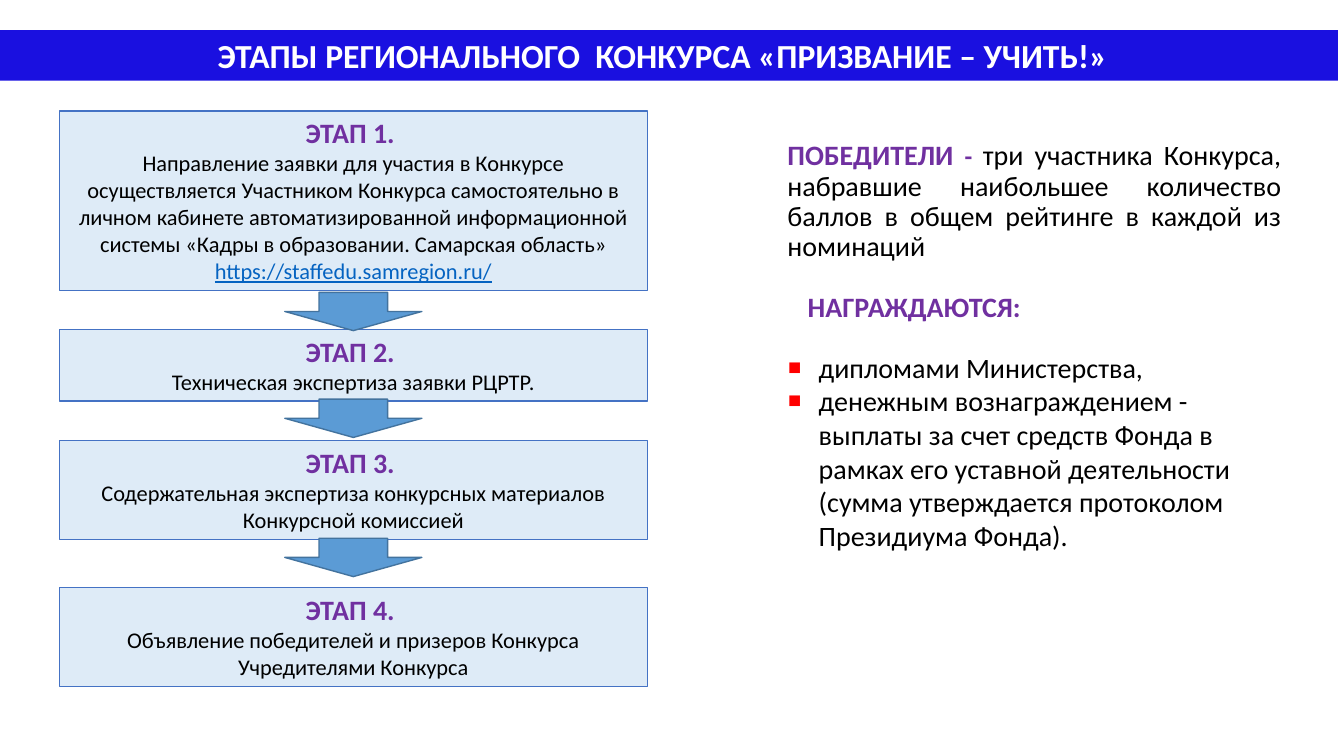
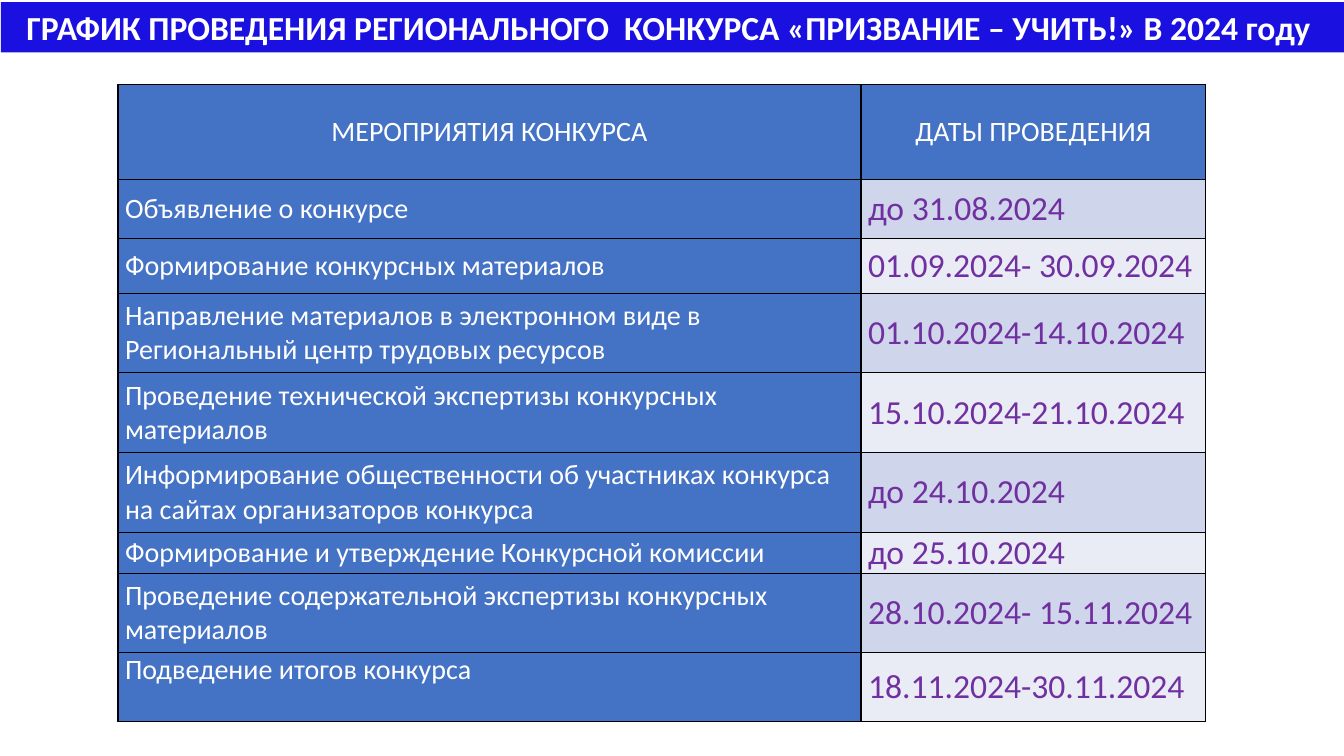
from dataclasses import dataclass
from typing import Any, Optional

from lxml import etree
from pptx import Presentation
from pptx.dml.color import RGBColor
from pptx.enum.shapes import MSO_SHAPE
from pptx.enum.text import MSO_ANCHOR, MSO_AUTO_SIZE, PP_ALIGN
from pptx.oxml.ns import qn
from pptx.util import Inches, Pt

RECT, DOWN_ARROW = MSO_SHAPE.RECTANGLE, MSO_SHAPE.DOWN_ARROW
TOP, MIDDLE = MSO_ANCHOR.TOP, MSO_ANCHOR.MIDDLE
LEFT, CENTER, JUSTIFY = PP_ALIGN.LEFT, PP_ALIGN.CENTER, PP_ALIGN.JUSTIFY
NO_FIT = MSO_AUTO_SIZE.NONE

FONT = "Calibri"
WHITE, BLACK, RED = "FFFFFF", "000000", "FF0000"
PURPLE, BAND_BLUE, LINK_BLUE = "7030A0", "1A10E0", "0563C1"
STAGE_FILL, STAGE_LINE = "DEEBF7", "4472C4"
ARROW_FILL, ARROW_LINE = "5B9BD5", "43739E"
LABEL_FILL = "4472C4"
DATE_FILLS = ("CFD5EA", "E9EBF5")

STAGE_LEFT, STAGE_WIDTH = 0.59, 5.83
ARROW_WIDTH, ARROW_HEIGHT = 1.36, 0.38
BULLET_INDENT = 0.31

HEADING = {"size": Pt(20), "color": PURPLE, "bold": True}
STAGE_TEXT = {"size": Pt(16), "color": BLACK}
LINK = {"size": Pt(16), "color": LINK_BLUE, "underline": True}
BODY_TEXT = {"size": Pt(20), "color": BLACK, "bold": False}
BAND_TEXT = {"size": Pt(24), "color": WHITE, "bold": True}
LABEL_TEXT = {"size": Pt(20), "color": WHITE}
DATE_TEXT = {"size": Pt(24), "color": PURPLE}


@dataclass(frozen=True)
class Stage:
    number: int
    top: float
    height: float
    text: str
    url: str = ""
    arrow_top: Optional[float] = None


@dataclass(frozen=True)
class Event:
    label: str
    dates: str
    height: float
    anchor: Any = MIDDLE


STAGES = (
    Stage(1, 1.1, 1.78,
          "Направление заявки для участия в Конкурсе осуществляется Участником "
          "Конкурса самостоятельно в личном кабинете автоматизированной "
          "информационной системы «Кадры в образовании. Самарская область» ",
          "https://staffedu.samregion.ru/", 2.9),
    Stage(2, 3.27, 0.71, "Техническая экспертиза заявки РЦРТР.", arrow_top=3.96),
    Stage(3, 4.37, 0.98,
          "Содержательная экспертиза конкурсных материалов Конкурсной комиссией",
          arrow_top=5.34),
    Stage(4, 5.83, 0.98,
          "Объявление победителей и призеров Конкурса Учредителями Конкурса"),
)

AWARDS = (
    "дипломами Министерства,",
    "денежным вознаграждением - выплаты за счет средств Фонда в рамках его "
    "уставной деятельности (сумма утверждается протоколом Президиума Фонда).",
)

COLUMNS = (7.37, 3.42)
HEADER = Event("МЕРОПРИЯТИЯ КОНКУРСА", "ДАТЫ ПРОВЕДЕНИЯ", 0.94)
EVENTS = (
    Event("Объявление о конкурсе", "до 31.08.2024", 0.59),
    Event("Формирование конкурсных материалов", "01.09.2024- 30.09.2024", 0.54),
    Event("Направление материалов в электронном виде в Региональный центр "
          "трудовых ресурсов", "01.10.2024-14.10.2024", 0.79),
    Event("Проведение технической экспертизы конкурсных материалов",
          "15.10.2024-21.10.2024", 0.79),
    Event("Информирование общественности об участниках конкурса на сайтах "
          "организаторов конкурса", "до 24.10.2024", 0.79),
    Event("Формирование и утверждение Конкурсной комиссии", "до 25.10.2024", 0.4),
    Event("Проведение содержательной экспертизы конкурсных материалов",
          "28.10.2024- 15.11.2024", 0.79),
    Event("Подведение итогов конкурса", "18.11.2024-30.11.2024", 0.68, TOP),
)


def rgb(color: str) -> RGBColor:
    return RGBColor.from_string(color)


def fill(target: Any, color: str) -> None:
    target.fill.solid()
    target.fill.fore_color.rgb = rgb(color)


def add_run(p: Any, text: str, style: dict[str, Any]) -> None:
    r = p.add_run()
    r.text = text
    r.font.name = FONT
    for name, value in style.items():
        if name == "color":
            r.font.color.rgb = rgb(value)
        else:
            setattr(r.font, name, value)


def place(sp: Any, left: float, top: float, width: float, height: float) -> None:
    sp.left, sp.top = Inches(left), Inches(top)
    sp.width, sp.height = Inches(width), Inches(height)


def prepare_text(sp: Any) -> Any:
    """Wrap the text from the top of the shape and return its frame."""
    tf = sp.text_frame
    tf.word_wrap = True
    tf.auto_size = NO_FIT
    tf.vertical_anchor = TOP
    return tf


def add_title_band(s: Any, text: str, left: float, top: float) -> None:
    sp = s.shapes.title
    place(sp, left, top, 13.32, 0.5)
    fill(sp, BAND_BLUE)
    p = prepare_text(sp).paragraphs[0]
    p.alignment = CENTER
    add_run(p, text, BAND_TEXT)


def add_shape(s: Any, kind: Any, box: tuple[float, float, float, float],
              color: str, line: str) -> Any:
    sp = s.shapes.add_shape(kind, *map(Inches, box))
    sp.shadow.inherit = False
    fill(sp, color)
    sp.line.color.rgb = rgb(line)
    sp.line.width = Pt(1)
    return sp


def add_stage(s: Any, stage: Stage) -> None:
    box = (STAGE_LEFT, stage.top, STAGE_WIDTH, stage.height)
    tf = prepare_text(add_shape(s, RECT, box, STAGE_FILL, STAGE_LINE))
    heading, text = tf.paragraphs[0], tf.add_paragraph()
    heading.alignment = text.alignment = CENTER
    add_run(heading, f"ЭТАП {stage.number}. ", HEADING)
    add_run(text, stage.text, STAGE_TEXT)
    if stage.url:
        add_run(text, stage.url, LINK)


def add_arrow(s: Any, top: float) -> None:
    left = STAGE_LEFT + (STAGE_WIDTH - ARROW_WIDTH) / 2
    add_shape(s, DOWN_ARROW, (left, top, ARROW_WIDTH, ARROW_HEIGHT),
              ARROW_FILL, ARROW_LINE)


def format_paragraph(p: Any, before: float = 0, margin: float = 0,
                     bullet: str = "") -> None:
    """Set the space before, left margin and hanging bullet, if any."""
    p.alignment = LEFT
    p.space_before = Pt(before)
    pPr = p._p.get_or_add_pPr()
    pPr.set("marL", str(Inches(margin)))
    pPr.set("indent", str(-Inches(margin) if bullet else 0))
    if not bullet:
        etree.SubElement(pPr, qn("a:buNone"))
        return
    color = etree.SubElement(pPr, qn("a:buClr"))
    etree.SubElement(color, qn("a:srgbClr"), val=RED)
    etree.SubElement(pPr, qn("a:buSzPct"), val="149000")
    etree.SubElement(pPr, qn("a:buFont"), typeface=FONT)
    etree.SubElement(pPr, qn("a:buChar"), char=bullet)


def add_winners(s: Any) -> None:
    sp = s.placeholders[1]
    place(sp, 7.71, 1.35, 5.1, 4.54)
    fill(sp, WHITE)
    tf = prepare_text(sp)

    p = tf.paragraphs[0]
    format_paragraph(p)
    p.alignment = JUSTIFY
    p.line_spacing = Pt(21.6)
    add_run(p, "ПОБЕДИТЕЛИ ", HEADING)
    add_run(p, "- ", {**HEADING, "size": Pt(18)})
    add_run(p, "три участника Конкурса, набравшие наибольшее количество баллов "
               "в общем рейтинге в каждой из номинаций", BODY_TEXT)

    p = tf.add_paragraph()
    format_paragraph(p, before=19.5, margin=0.2)
    add_run(p, "НАГРАЖДАЮТСЯ:", HEADING)

    for i, award in enumerate(AWARDS):
        p = tf.add_paragraph()
        format_paragraph(p, 0 if i else 19.5, BULLET_INDENT, "▪")
        add_run(p, award, BODY_TEXT)


def add_borders(cell: Any) -> None:
    tcPr = cell._tc.get_or_add_tcPr()
    for side in ("L", "R", "T", "B"):
        line = etree.SubElement(tcPr, qn(f"a:ln{side}"), w=str(Pt(1)))
        paint = etree.SubElement(line, qn("a:solidFill"))
        etree.SubElement(paint, qn("a:srgbClr"), val=BLACK)


def fill_cell(cell: Any, text: str, style: dict[str, Any], color: str,
              anchor: Any = MIDDLE, align: Any = LEFT) -> None:
    add_borders(cell)
    fill(cell, color)
    cell.margin_left = cell.margin_right = Inches(0.07)
    cell.margin_top = cell.margin_bottom = 0
    cell.vertical_anchor = anchor
    p = cell.text_frame.paragraphs[0]
    p.alignment = align
    add_run(p, text, style)


def add_schedule(s: Any) -> None:
    rows = (HEADER, *EVENTS)
    height = sum(row.height for row in rows)
    table = s.shapes.add_table(len(rows), len(COLUMNS), Inches(1.17), Inches(0.84),
                               Inches(sum(COLUMNS)), Inches(height)).table
    table.first_row = table.horz_banding = False
    for column, width in zip(table.columns, COLUMNS):
        column.width = Inches(width)
    for row, event in zip(table.rows, rows):
        row.height = Inches(event.height)

    for col, text in enumerate((HEADER.label, HEADER.dates)):
        fill_cell(table.cell(0, col), text, LABEL_TEXT, LABEL_FILL, align=CENTER)
    for i, event in enumerate(EVENTS):
        fill_cell(table.cell(i + 1, 0), event.label, LABEL_TEXT, LABEL_FILL,
                  event.anchor)
        fill_cell(table.cell(i + 1, 1), event.dates, DATE_TEXT,
                  DATE_FILLS[i % len(DATE_FILLS)])


def build_stages_slide(prs: Any) -> None:
    s = prs.slides.add_slide(prs.slide_layouts[1])
    add_title_band(s, "ЭТАПЫ РЕГИОНАЛЬНОГО  КОНКУРСА «ПРИЗВАНИЕ – УЧИТЬ!» ", -0.05, 0.3)
    for stage in STAGES:
        add_stage(s, stage)
    add_winners(s)
    for stage in STAGES:
        if stage.arrow_top is not None:
            add_arrow(s, stage.arrow_top)


def build_schedule_slide(prs: Any) -> None:
    s = prs.slides.add_slide(prs.slide_layouts[5])
    add_title_band(s, "ГРАФИК ПРОВЕДЕНИЯ РЕГИОНАЛЬНОГО  КОНКУРСА "
                      "«ПРИЗВАНИЕ – УЧИТЬ!» В 2024 году ", 0.01, 0.02)
    add_schedule(s)


def main() -> None:
    prs = Presentation()
    prs.slide_width, prs.slide_height = Inches(13.33), Inches(7.5)
    build_stages_slide(prs)
    build_schedule_slide(prs)
    prs.save("out.pptx")


if __name__ == "__main__":
    main()
